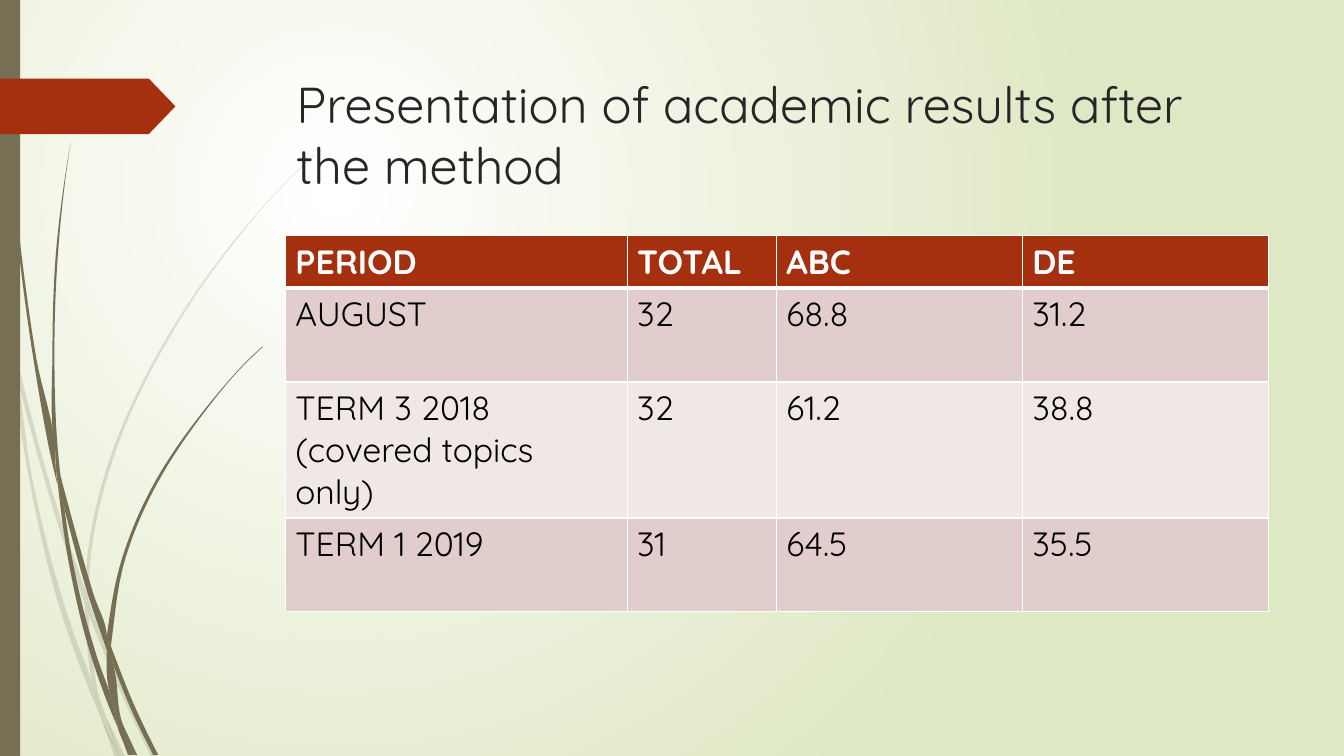
from dataclasses import dataclass

import pptx
import pptx.dml.color
import pptx.enum.shapes
import pptx.enum.text
import pptx.oxml
import pptx.oxml.ns
import pptx.slide
import pptx.table
import pptx.text.text
import pptx.util

RGBColor = pptx.dml.color.RGBColor
Point = tuple[int, int]

PX = 9144  # EMU in one px, 100 px to the inch
FONT = "Quicksand"
WHITE = RGBColor(0xFF, 0xFF, 0xFF)
BLACK = RGBColor(0x00, 0x00, 0x00)
TITLE_GREY = RGBColor(0x26, 0x26, 0x26)
PALE_GREEN = RGBColor(0xDF, 0xE8, 0xC4)
OLIVE = RGBColor(0x76, 0x6F, 0x54)
RUST = RGBColor(0xA5, 0x30, 0x10)
ROSE = RGBColor(0xE1, 0xCD, 0xCC)
PALE_ROSE = RGBColor(0xF0, 0xE8, 0xE7)


@dataclass(frozen=True)
class Blade:
    """A piece of a grass blade; both edges run from top to bottom."""
    left: list[Point]
    right: list[Point]


@dataclass(frozen=True)
class ResultRow:
    values: tuple[str, ...]
    height: int
    fill: RGBColor
    heading: bool = False


FADED_GRASS = [
    Blade([(0, 299), (10, 344), (11, 350)], [(0, 282), (9, 322), (11, 350)]),
    Blade([(17, 376), (58, 522), (84, 599)], [(14, 345), (62, 520), (85, 586)]),
    Blade([(88, 610), (123, 694), (150, 751)], [(88, 596), (92, 607), (127, 692), (155, 751)]),
    Blade([(105, 711), (119, 751)], [(105, 711), (124, 751)]),
    Blade([(11, 350), (28, 470), (65, 621), (92, 693), (101, 714)],
          [(11, 350), (17, 376), (31, 469), (70, 619), (93, 683), (99, 707), (101, 714)]),
    Blade([(84, 599), (87, 646), (93, 683), (96, 692), (105, 711)],
          [(88, 608), (88, 610), (91, 646), (103, 706), (105, 711)]),
    Blade([(312, 153), (289, 175), (268, 197), (228, 244), (158, 348), (107, 461),
           (85, 584), (85, 586)],
          [(312, 154), (290, 175), (268, 198), (229, 245), (160, 349), (110, 462),
           (88, 584), (88, 596)]),
    Blade([(101, 714), (114, 751)], [(101, 714), (119, 751)]),
    Blade([(85, 586), (84, 599)], [(85, 586), (88, 596), (88, 608)]),
    Blade([(93, 683), (99, 707), (101, 714), (119, 751)],
          [(93, 683), (96, 692), (105, 711), (119, 751)]),
]
GRASS = [
    Blade([(3, 0), (4, 48), (7, 110), (17, 233), (33, 355), (56, 477), (57, 481)],
          [(4, 0), (5, 48), (8, 109), (19, 232), (36, 355), (55, 453), (55, 457), (57, 481)]),
    Blade([(64, 505), (88, 592), (106, 645)], [(60, 472), (93, 590), (106, 631), (106, 633)]),
    Blade([(111, 656), (132, 708), (152, 749)], [(110, 641), (113, 649), (136, 706), (157, 749)]),
    Blade([(57, 477), (68, 557), (93, 659), (111, 708), (117, 722)],
          [(64, 505), (72, 556), (98, 657), (110, 691), (116, 717), (117, 722)]),
    Blade([(70, 141), (62, 193), (56, 245), (52, 349), (55, 449), (60, 472)],
          [(70, 141), (63, 193), (58, 245), (54, 349), (58, 453), (60, 472)]),
    Blade([(122, 719), (133, 749)], [(122, 719), (136, 749)]),
    Blade([(55, 449), (55, 453), (57, 477), (64, 505)], [(55, 449), (60, 472), (64, 505)]),
    Blade([(260, 344), (245, 358), (231, 373), (204, 405), (156, 474), (122, 551), (106, 631)],
          [(261, 344), (245, 359), (231, 374), (205, 406), (158, 476), (125, 552),
           (111, 633), (110, 641)]),
    Blade([(117, 722), (127, 749)], [(117, 722), (131, 749)]),
    Blade([(106, 645), (110, 691), (116, 706), (122, 719)],
          [(109, 651), (111, 656), (121, 716), (122, 719)]),
    Blade([(106, 631), (106, 645)], [(106, 631), (110, 641), (111, 656)]),
    Blade([(110, 691), (116, 717), (117, 722), (130, 749)],
          [(110, 691), (116, 706), (122, 719), (133, 749)]),
]

COLUMN_WIDTHS = [339, 148, 244, 244]
RESULTS = [
    ResultRow(("PERIOD", "TOTAL", "ABC", "DE"), 52, RUST, heading=True),
    ResultRow(("AUGUST", "32", "68.8", "31.2"), 93, ROSE),
    ResultRow(("TERM 3 2018 (covered topics only)", "32", "61.2", "38.8"), 135, PALE_ROSE),
    ResultRow(("TERM 1 2019", "31", "64.5", "35.5"), 93, ROSE),
]


def px(length: float) -> pptx.util.Emu:
    return pptx.util.Emu(round(length * PX))


def xml(markup: str):
    """Build one drawing element from markup in the a: and p: namespaces."""
    head, mark, tail = markup.partition(">")
    return pptx.oxml.parse_xml(f"{head} {pptx.oxml.ns.nsdecls('a', 'p')}{mark}{tail}")


def write(frame: pptx.text.text.TextFrame, text: str, *, size: int,
          color: RGBColor, bold: bool = False) -> None:
    frame.word_wrap = True
    run = frame.paragraphs[0].add_run()
    run.text = text
    run.font.name = FONT
    run.font.size = pptx.util.Pt(size)
    run.font.bold = bold
    run.font.color.rgb = color


def paint(shape, color: RGBColor, opacity: int = 100) -> None:
    shape.shadow.inherit = False
    shape.line.fill.background()
    shape.fill.solid()
    shape.fill.fore_color.rgb = color
    if opacity < 100:
        tint = shape.element.spPr.find(".//" + pptx.oxml.ns.qn("a:srgbClr"))
        tint.append(xml(f'<a:alpha val="{opacity * 1000}"></a:alpha>'))


def edge_slopes(edge: list[Point]) -> list[float]:
    """Give dx/dy at each point of a smooth curve through the edge."""
    rises = [b[1] - a[1] for a, b in zip(edge, edge[1:])]
    chords = [(b[0] - a[0]) / rise for a, b, rise in zip(edge, edge[1:], rises)]
    if len(chords) == 1:
        return chords * 2
    inner = [(rises[i + 1] * chords[i] + rises[i] * chords[i + 1]) / (rises[i] + rises[i + 1])
             for i in range(len(chords) - 1)]
    return [1.5 * chords[0] - inner[0] / 2, *inner, 1.5 * chords[-1] - inner[-1] / 2]


def draw_blade(slide: pptx.slide.Slide, blade: Blade, opacity: int = 100) -> None:
    outline = ([*zip(blade.left, edge_slopes(blade.left))]
               + [*zip(blade.right, edge_slopes(blade.right))][::-1])
    knots = [(px(x), px(y)) for (x, y), _ in outline]
    builder = slide.shapes.build_freeform(*knots[0])
    builder.add_line_segments(knots[1:], close=True)
    shape = builder.convert_to_shape()
    lines = list(shape.element.iter(pptx.oxml.ns.qn("a:lnTo")))
    # Bend every side into a curve, except the cap that joins the two edges
    for i, line in enumerate(lines[:len(outline) - 1]):
        if i == len(blade.left) - 1:
            continue
        ((x0, y0), slope0), ((x1, y1), slope1) = outline[i:i + 2]
        third = (y1 - y0) / 3
        curve = [(x0 + slope0 * third, y0 + third), (x1 - slope1 * third, y1 - third), (x1, y1)]
        points = "".join(f'<a:pt x="{px(x) - shape.left}" y="{px(y) - shape.top}"/>'
                         for x, y in curve)
        line.getparent().replace(line, xml(f"<a:cubicBezTo>{points}</a:cubicBezTo>"))
    paint(shape, OLIVE, opacity)


def draw_block(slide: pptx.slide.Slide, kind: pptx.enum.shapes.MSO_SHAPE,
               left: int, top: int, width: int, height: int, color: RGBColor):
    block = slide.shapes.add_shape(kind, px(left), px(top), px(width), px(height))
    paint(block, color)
    return block


def add_borders(cell: pptx.table._Cell, top: int, bottom: int) -> None:
    properties = cell._tc.get_or_add_tcPr()
    for i, (side, points) in enumerate({"L": 1, "R": 1, "T": top, "B": bottom}.items()):
        properties.insert(i, xml(
            f'<a:ln{side} w="{pptx.util.Pt(points)}"><a:solidFill>'
            f'<a:srgbClr val="{WHITE}"/></a:solidFill></a:ln{side}>'))


def draw_results(slide: pptx.slide.Slide, left: int, top: int) -> None:
    table = slide.shapes.add_table(
        len(RESULTS), len(COLUMN_WIDTHS), px(left), px(top),
        px(sum(COLUMN_WIDTHS)), px(sum(row.height for row in RESULTS))).table
    for column, width in zip(table.columns, COLUMN_WIDTHS):
        column.width = px(width)
    for r, row in enumerate(RESULTS):
        table.rows[r].height = px(row.height)
        for c, value in enumerate(row.values):
            cell = table.cell(r, c)
            cell.fill.solid()
            cell.fill.fore_color.rgb = row.fill
            add_borders(cell, top=3 if r == 1 else 1, bottom=3 if row.heading else 1)
            write(cell.text_frame, value, size=24, bold=row.heading,
                  color=WHITE if row.heading else BLACK)


def draw_background(slide: pptx.slide.Slide) -> None:
    slide.element.find(pptx.oxml.ns.qn("p:cSld")).insert(0, xml(
        '<p:bg><p:bgPr><a:gradFill rotWithShape="1"><a:gsLst>'
        f'<a:gs pos="0"><a:srgbClr val="{WHITE}"/></a:gs>'
        f'<a:gs pos="100000"><a:srgbClr val="{PALE_GREEN}"/></a:gs></a:gsLst>'
        '<a:path path="circle"><a:fillToRect l="50000" t="50000" r="100000" b="100000"/>'
        '</a:path></a:gradFill><a:effectLst/></p:bgPr></p:bg>'))


def main() -> None:
    deck = pptx.Presentation()
    deck.slide_width, deck.slide_height = px(1333), px(750)
    slide = deck.slides.add_slide(deck.slide_layouts[6])
    draw_background(slide)
    for blade in FADED_GRASS:
        draw_blade(slide, blade, opacity=20)
    for blade in GRASS:
        draw_blade(slide, blade)
    # Side bar and pointer
    shapes = pptx.enum.shapes.MSO_SHAPE
    draw_block(slide, shapes.RECTANGLE, 0, 0, 20, 750, OLIVE)
    pointer = draw_block(slide, shapes.PENTAGON, 0, 78, 174, 55, RUST)
    pointer.adjustments[0] = 0.48
    # Title
    title = slide.shapes.add_textbox(px(284), px(68), px(975), px(140))
    write(title.text_frame, "Presentation of academic results after the method",
          size=36, color=TITLE_GREY)
    draw_results(slide, 283, 234)
    deck.save("out.pptx")


if __name__ == "__main__":
    main()
